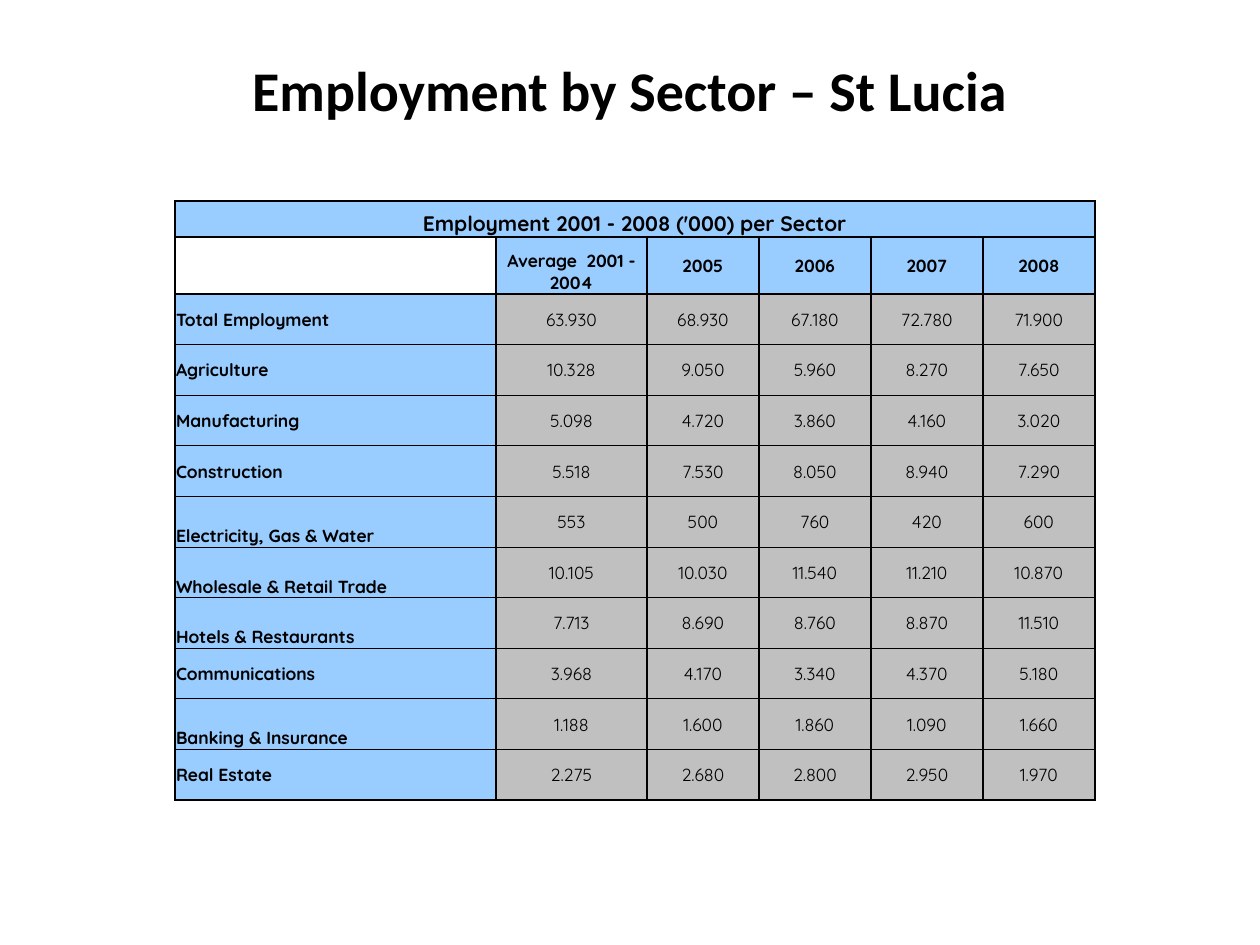
from lxml import etree
from pptx import Presentation
from pptx.dml.color import RGBColor
from pptx.enum.text import MSO_ANCHOR, PP_ALIGN
from pptx.oxml.ns import qn
from pptx.util import Emu, Pt

LEFT, CENTER = PP_ALIGN.LEFT, PP_ALIGN.CENTER
MIDDLE, BOTTOM = MSO_ANCHOR.MIDDLE, MSO_ANCHOR.BOTTOM
BLACK = RGBColor(0x00, 0x00, 0x00)
BLUE = RGBColor(0x99, 0xCC, 0xFF)
GRAY = RGBColor(0xC0, 0xC0, 0xC0)

TITLE = "Employment by Sector – St Lucia"
CAPTION = "Employment 2001 - 2008 ('000) per Sector"
PERIODS = ["Average  2001 - 2004", "2005", "2006", "2007", "2008"]
SECTORS = [
    ("Total Employment", "63.930", "68.930", "67.180", "72.780", "71.900"),
    ("Agriculture", "10.328", "9.050", "5.960", "8.270", "7.650"),
    ("Manufacturing", "5.098", "4.720", "3.860", "4.160", "3.020"),
    ("Construction", "5.518", "7.530", "8.050", "8.940", "7.290"),
    ("Electricity, Gas & Water", "553", "500", "760", "420", "600"),
    ("Wholesale & Retail Trade", "10.105", "10.030", "11.540", "11.210", "10.870"),
    ("Hotels & Restaurants", "7.713", "8.690", "8.760", "8.870", "11.510"),
    ("Communications", "3.968", "4.170", "3.340", "4.370", "5.180"),
    ("Banking & Insurance", "1.188", "1.600", "1.860", "1.090", "1.660"),
    ("Real Estate", "2.275", "2.680", "2.800", "2.950", "1.970"),
]
COLUMN_WIDTHS = [321, 151] + [112] * 4
CAPTION_HEIGHT, PERIODS_HEIGHT, SECTORS_HEIGHT = 36, 57, 506
TABLE_LEFT, TABLE_TOP = 175, 201


def px(length):
    return Emu(round(length * 914400 / 126))


def write(frame, text, size, font, bold, align):
    paragraph = frame.paragraphs[0]
    paragraph.alignment = align
    run = paragraph.add_run()
    run.text = text
    run.font.size = Pt(size)
    run.font.name = font
    run.font.bold = bold
    run.font.color.rgb = BLACK


def set_borders(cell, top, bottom):
    properties = cell._tc.get_or_add_tcPr()
    widths = {"a:lnL": 1, "a:lnR": 1, "a:lnT": top, "a:lnB": bottom}
    for position, (side, width) in enumerate(widths.items()):
        line = etree.Element(qn(side), w=str(Pt(width)))
        fill = etree.SubElement(line, qn("a:solidFill"))
        etree.SubElement(fill, qn("a:srgbClr"), val=str(BLACK))
        properties.insert(position, line)


def format_cell(cell, text, fill, size=10, bold=True, align=CENTER, anchor=MIDDLE):
    cell.margin_left = cell.margin_right = cell.margin_top = px(1)
    cell.margin_bottom = 0
    cell.vertical_anchor = anchor
    if text:
        cell.fill.solid()
        cell.fill.fore_color.rgb = fill
        write(cell.text_frame, text, size, "Quicksand", bold, align)
    else:
        cell.fill.background()


def add_title(slide):
    frame = slide.shapes.add_textbox(px(63), px(38), px(1134), px(102)).text_frame
    frame.word_wrap = True
    frame.vertical_anchor = MIDDLE
    write(frame, TITLE, 32, "Calibri", True, CENTER)


def add_employment_table(slide):
    row_count, column_count = len(SECTORS) + 2, len(COLUMN_WIDTHS)
    height = CAPTION_HEIGHT + PERIODS_HEIGHT + SECTORS_HEIGHT
    table = slide.shapes.add_table(
        row_count, column_count, px(TABLE_LEFT), px(TABLE_TOP),
        px(sum(COLUMN_WIDTHS)), px(height)).table
    table.first_row = table.horz_banding = False
    for column, width in zip(table.columns, COLUMN_WIDTHS):
        column.width = px(width)
    sector_heights = [SECTORS_HEIGHT / len(SECTORS)] * len(SECTORS)
    for row, row_height in zip(table.rows, [CAPTION_HEIGHT, PERIODS_HEIGHT] + sector_heights):
        row.height = px(row_height)

    table.cell(0, 0).merge(table.cell(0, column_count - 1))
    format_cell(table.cell(0, 0), CAPTION, BLUE, size=12, anchor=BOTTOM)
    for c, period in enumerate([""] + PERIODS):
        format_cell(table.cell(1, c), period, BLUE, anchor=BOTTOM if c == 1 else MIDDLE)
    for r, (sector, *values) in enumerate(SECTORS, start=2):
        format_cell(table.cell(r, 0), sector, BLUE, align=LEFT,
                    anchor=BOTTOM if "&" in sector else MIDDLE)
        for c, value in enumerate(values, start=1):
            format_cell(table.cell(r, c), value, GRAY, bold=False)

    for r in range(row_count):
        top = 1 if r <= 2 else 0.5
        bottom = 1 if r < 2 or r == row_count - 1 else 0.5
        for c in range(column_count):
            set_borders(table.cell(r, c), top, bottom)


def main():
    presentation = Presentation()
    presentation.slide_width, presentation.slide_height = px(1260), px(945)
    slide = presentation.slides.add_slide(presentation.slide_layouts[6])
    add_title(slide)
    add_employment_table(slide)
    presentation.save("out.pptx")


if __name__ == "__main__":
    main()
